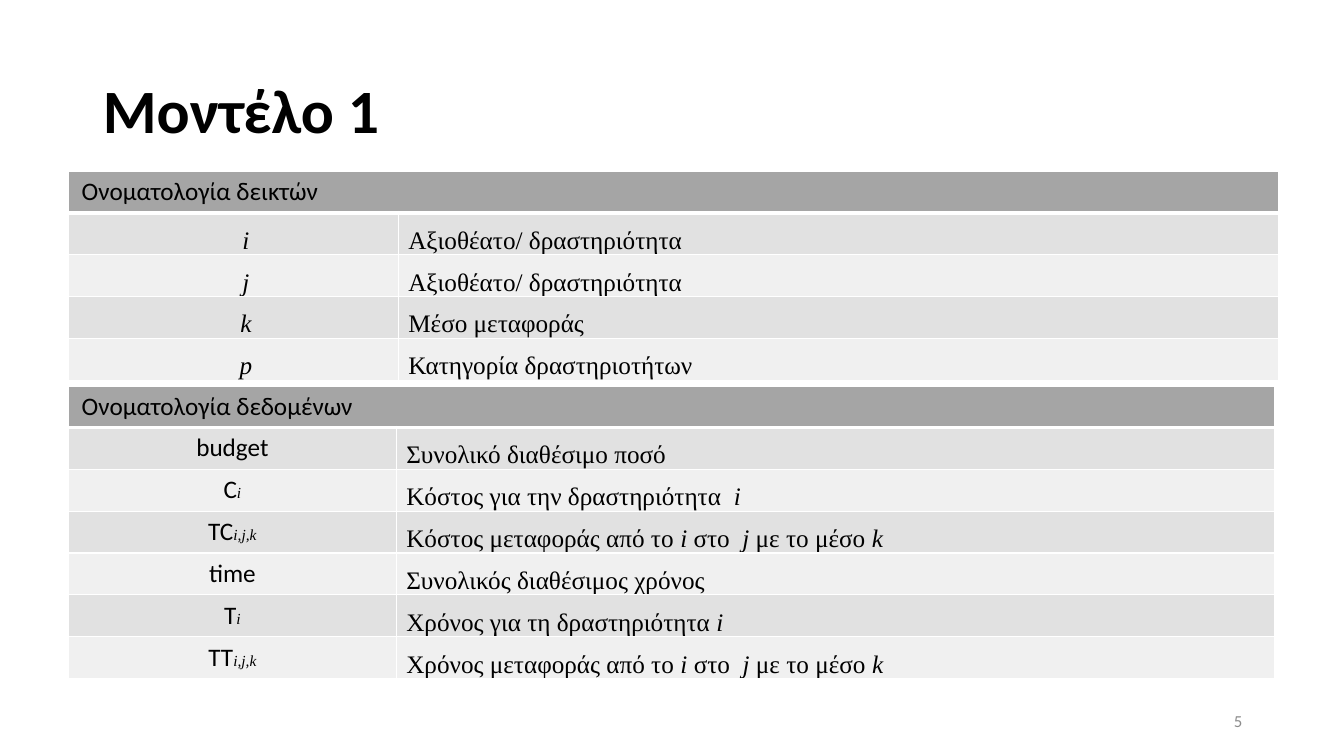
from dataclasses import dataclass

from lxml.etree import SubElement
from pptx import Presentation
from pptx.dml.color import RGBColor
from pptx.enum.text import MSO_ANCHOR as Anchor, PP_ALIGN as Align
from pptx.oxml.ns import qn
from pptx.util import Inches, Pt


@dataclass(frozen=True)
class Theme:
    sans: str = "Calibri"
    serif: str = "Times New Roman"
    ink: str = "000000"
    muted: str = "8C8C8C"
    border: str = "FFFFFF"
    heading_fill: str = "A5A5A5"
    row_fills: tuple[str, str] = ("E1E1E1", "F0F0F0")
    title_size: float = 44
    body_size: float = 18
    subscript_size: float = 11
    number_size: float = 12


THEME = Theme()


@dataclass(frozen=True)
class CellStyle:
    font: str
    align: Align
    margin_x: float
    margin_y: float
    line_spacing: float = 1.0
    indent: float = 0
    italic_size: float = THEME.body_size


@dataclass(frozen=True)
class Nomenclature:
    heading: str
    top: float
    widths: tuple[float, float]
    symbol_style: CellStyle
    entries: tuple[tuple[str, str], ...]


ROW_HEIGHT = 0.41
TABLE_LEFT = 0.68
HEADING = CellStyle(THEME.sans, Align.LEFT, 0.13, 0.05)
INDEX = CellStyle(THEME.serif, Align.CENTER, 0.1, 0, 1.5, 0.25)
DATUM = CellStyle(THEME.sans, Align.CENTER, 0.13, 0.05, italic_size=THEME.subscript_size)
MEANING = CellStyle(THEME.serif, Align.JUSTIFY, 0.1, 0, 1.5)

NOMENCLATURES = (
    Nomenclature("Ονοματολογία δεικτών", 1.7, (3.27, 8.73), INDEX, (
        ("*i*", "Αξιοθέατο/ δραστηριότητα"),
        ("*j*", "Αξιοθέατο/ δραστηριότητα"),
        ("*k*", "Μέσο μεταφοράς"),
        ("*p*", "Κατηγορία δραστηριοτήτων"),
    )),
    Nomenclature("Ονοματολογία δεδομένων", 3.83, (3.25, 8.71), DATUM, (
        ("budget", "Συνολικό διαθέσιμο ποσό"),
        ("C*i*", "Κόστος για την δραστηριότητα  *i*"),
        ("TC*i,j,k*", "Κόστος μεταφοράς από το *i* στο  *j* με το μέσο *k*"),
        ("time", "Συνολικός διαθέσιμος χρόνος"),
        ("T*i*", "Χρόνος για τη δραστηριότητα *i*"),
        ("TT*i,j,k*", "Χρόνος μεταφοράς από το *i* στο  *j* με το μέσο *k*"),
    )),
)


def apply_format(target, values: dict) -> None:
    for name, value in values.items():
        setattr(target, name, value)


def add_run(paragraph, text: str, font: str, size: float, color: str,
            bold: bool = False, italic: bool = False) -> None:
    run = paragraph.add_run()
    run.text = text
    apply_format(run.font, {"name": font, "size": Pt(size), "bold": bold, "italic": italic})
    run.font.color.rgb = RGBColor.from_string(color)


def set_borders(cell, bottom_width: float) -> None:
    properties = cell._tc.get_or_add_tcPr()
    for side, width in {"L": 1, "R": 1, "T": 1, "B": bottom_width}.items():
        line = SubElement(properties, qn(f"a:ln{side}"), w=str(Pt(width)))
        SubElement(SubElement(line, qn("a:solidFill")), qn("a:srgbClr"), val=THEME.border)


def fill_cell(cell, marked_text: str, style: CellStyle, fill: str, bottom_width: float = 1) -> None:
    apply_format(cell, {
        "margin_left": Inches(style.margin_x), "margin_right": Inches(style.margin_x),
        "margin_top": Inches(style.margin_y), "margin_bottom": Inches(style.margin_y),
        "vertical_anchor": Anchor.MIDDLE,
    })
    set_borders(cell, bottom_width)
    cell.fill.solid()
    cell.fill.fore_color.rgb = RGBColor.from_string(fill)
    paragraph = cell.text_frame.paragraphs[0]
    apply_format(paragraph, {"alignment": style.align, "line_spacing": style.line_spacing})
    if style.indent:
        paragraph._p.get_or_add_pPr().set("marL", str(Inches(style.indent)))
    for position, part in enumerate(marked_text.split("*")):
        italic = position % 2 == 1
        if part:
            add_run(paragraph, part, THEME.serif if italic else style.font,
                    style.italic_size if italic else THEME.body_size, THEME.ink, italic=italic)


def add_nomenclature(slide, nomenclature: Nomenclature) -> None:
    row_count = len(nomenclature.entries) + 1
    table = slide.shapes.add_table(
        row_count, 2, Inches(TABLE_LEFT), Inches(nomenclature.top),
        Inches(sum(nomenclature.widths)), Inches(ROW_HEIGHT * row_count)).table
    for column, width in zip(table.columns, nomenclature.widths):
        column.width = Inches(width)
    for row in table.rows:
        row.height = Inches(ROW_HEIGHT)
    table.cell(0, 0).merge(table.cell(0, 1))
    fill_cell(table.cell(0, 0), nomenclature.heading, HEADING, THEME.heading_fill, 3)
    for row, (symbol, meaning) in enumerate(nomenclature.entries, start=1):
        fill = THEME.row_fills[(row - 1) % 2]
        fill_cell(table.cell(row, 0), symbol, nomenclature.symbol_style, fill)
        fill_cell(table.cell(row, 1), meaning, MEANING, fill)


def add_title(slide, text: str) -> None:
    title = slide.shapes.title
    apply_format(title, {"left": Inches(0.92), "top": Inches(0.4),
                         "width": Inches(11.5), "height": Inches(1.45)})
    title.text_frame.vertical_anchor = Anchor.MIDDLE
    paragraph = title.text_frame.paragraphs[0]
    apply_format(paragraph, {"alignment": Align.LEFT, "line_spacing": 0.9})
    add_run(paragraph, text, THEME.sans, THEME.title_size, THEME.ink, bold=True)


def add_page_number(slide, number: str) -> None:
    frame = slide.shapes.add_textbox(Inches(9.42), Inches(6.95), Inches(3), Inches(0.4)).text_frame
    apply_format(frame, {"word_wrap": True, "vertical_anchor": Anchor.MIDDLE})
    paragraph = frame.paragraphs[0]
    paragraph.alignment = Align.RIGHT
    add_run(paragraph, number, THEME.sans, THEME.number_size, THEME.muted)


def main() -> None:
    presentation = Presentation()
    apply_format(presentation, {"slide_width": Inches(13.33), "slide_height": Inches(7.5)})
    slide = presentation.slides.add_slide(presentation.slide_layouts[5])
    add_title(slide, "Μοντέλο 1")
    for nomenclature in NOMENCLATURES:
        add_nomenclature(slide, nomenclature)
    add_page_number(slide, "5")
    presentation.save("out.pptx")


if __name__ == "__main__":
    main()
